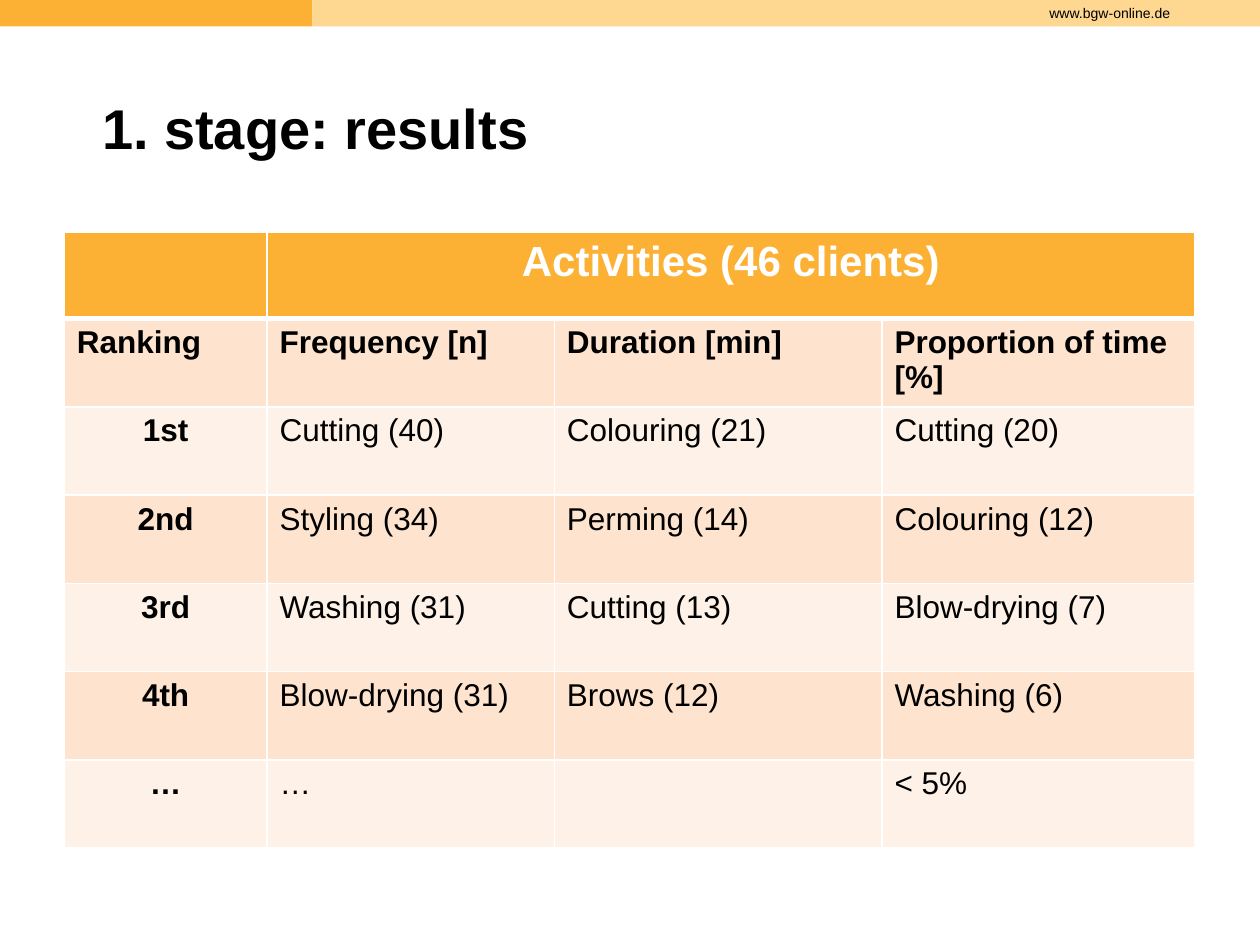
from dataclasses import dataclass

from lxml.etree import SubElement
from pptx import Presentation
from pptx.dml.color import RGBColor
from pptx.enum.shapes import MSO_SHAPE as Shape
from pptx.enum.text import MSO_ANCHOR as Anchor, PP_ALIGN as Align
from pptx.oxml.ns import qn
from pptx.util import Inches, Pt


@dataclass(frozen=True)
class Theme:
    font: str = "Arial"
    accent: str = "FCB135"
    accent_light: str = "FED790"
    band_dark: str = "FEE4CE"
    band_light: str = "FEF2E8"
    ink: str = "000000"
    paper: str = "FFFFFF"
    title_size: int = 32
    head_size: int = 24
    body_size: int = 18
    address_size: int = 8


THEME = Theme()
WIDTH, HEIGHT = 10, 7.5
BAR_SPLIT, BAR_HEIGHT = 2.48, 0.21
COLUMNS = [1.61, 2.28, 2.6, 2.48]
HEAD_HEIGHT, ROW_HEIGHT = 0.69, 0.7
HEADING = "Activities (46 clients)"
ROWS = [
    ["Ranking", "Frequency [n]", "Duration [min]", "Proportion of time [%]"],
    ["1st", "Cutting (40)", "Colouring (21)", "Cutting (20)"],
    ["2nd", "Styling (34)", "Perming (14)", "Colouring (12)"],
    ["3rd", "Washing (31)", "Cutting (13)", "Blow-drying (7)"],
    ["4th", "Blow-drying (31)", "Brows (12)", "Washing (6)"],
    ["…", "…", "", "< 5%"],
]


def write(frame, text, size, color=THEME.ink, bold=False, align=Align.LEFT):
    """Fill a text frame with one formatted paragraph."""
    frame.text = text
    para = frame.paragraphs[0]
    para.alignment = align
    for span in para.runs:
        span.font.name = THEME.font
        span.font.size = Pt(size)
        span.font.bold = bold
        span.font.color.rgb = RGBColor.from_string(color)
    return para


def add_bar(page, left, width, color):
    bar = page.shapes.add_shape(
        Shape.RECTANGLE, Inches(left), 0, Inches(width), Inches(BAR_HEIGHT))
    bar.shadow.inherit = False
    bar.fill.solid()
    bar.fill.fore_color.rgb = RGBColor.from_string(color)
    bar.line.fill.background()
    return bar


def add_header(page):
    add_bar(page, 0, BAR_SPLIT, THEME.accent)
    bar = add_bar(page, BAR_SPLIT, WIDTH - BAR_SPLIT, THEME.accent_light)
    frame = bar.text_frame
    frame.margin_right = Inches(0.71)
    frame.vertical_anchor = Anchor.MIDDLE
    write(frame, "www.bgw-online.de", THEME.address_size, align=Align.RIGHT)


def add_title(page, text):
    title = page.shapes.title
    title.left, title.top = Inches(0.71), Inches(0.6)
    title.width, title.height = Inches(8.58), Inches(0.77)
    title.text_frame.vertical_anchor = Anchor.MIDDLE
    para = write(title.text_frame, text, THEME.title_size, bold=True)
    para.line_spacing = 1.1


def set_borders(cell, top=1, bottom=1):
    """Draw the white cell borders; widths are in points."""
    properties = cell._tc.get_or_add_tcPr()
    widths = {"a:lnL": 1, "a:lnR": 1, "a:lnT": top, "a:lnB": bottom}
    for tag, width in widths.items():
        line = SubElement(properties, qn(tag), w=str(Pt(width)))
        fill = SubElement(line, qn("a:solidFill"))
        SubElement(fill, qn("a:srgbClr"), val=THEME.paper)


def style_cell(cell, color, top=1, bottom=1):
    set_borders(cell, top, bottom)
    cell.fill.solid()
    cell.fill.fore_color.rgb = RGBColor.from_string(color)


def add_ranking_table(page):
    table = page.shapes.add_table(
        len(ROWS) + 1, len(COLUMNS), Inches(0.51), Inches(1.84),
        Inches(sum(COLUMNS)),
        Inches(HEAD_HEIGHT + ROW_HEIGHT * len(ROWS))).table
    for column, width in zip(table.columns, COLUMNS):
        column.width = Inches(width)
    for index, row in enumerate(table.rows):
        row.height = Inches(ROW_HEIGHT if index else HEAD_HEIGHT)

    # Heading across the three activity columns
    for index in range(len(COLUMNS)):
        style_cell(table.cell(0, index), THEME.accent, bottom=3)
    table.cell(0, 1).merge(table.cell(0, len(COLUMNS) - 1))
    write(table.cell(0, 1).text_frame, HEADING, THEME.head_size,
          THEME.paper, True, Align.CENTER)

    # Banded rows: bold labels on top and in the ranking column
    for r, texts in enumerate(ROWS, start=1):
        band = THEME.band_dark if r % 2 else THEME.band_light
        for c, text in enumerate(texts):
            cell = table.cell(r, c)
            style_cell(cell, band, top=3 if r == 1 else 1)
            is_rank = c == 0 and r > 1
            write(cell.text_frame, text, THEME.body_size,
                  bold=r == 1 or is_rank,
                  align=Align.CENTER if is_rank else Align.LEFT)


def main():
    deck = Presentation()
    deck.slide_width, deck.slide_height = Inches(WIDTH), Inches(HEIGHT)
    page = deck.slides.add_slide(deck.slide_layouts.get_by_name("Title Only"))
    add_header(page)
    add_ranking_table(page)
    add_title(page, "1. stage: results")
    deck.save("out.pptx")


if __name__ == "__main__":
    main()
